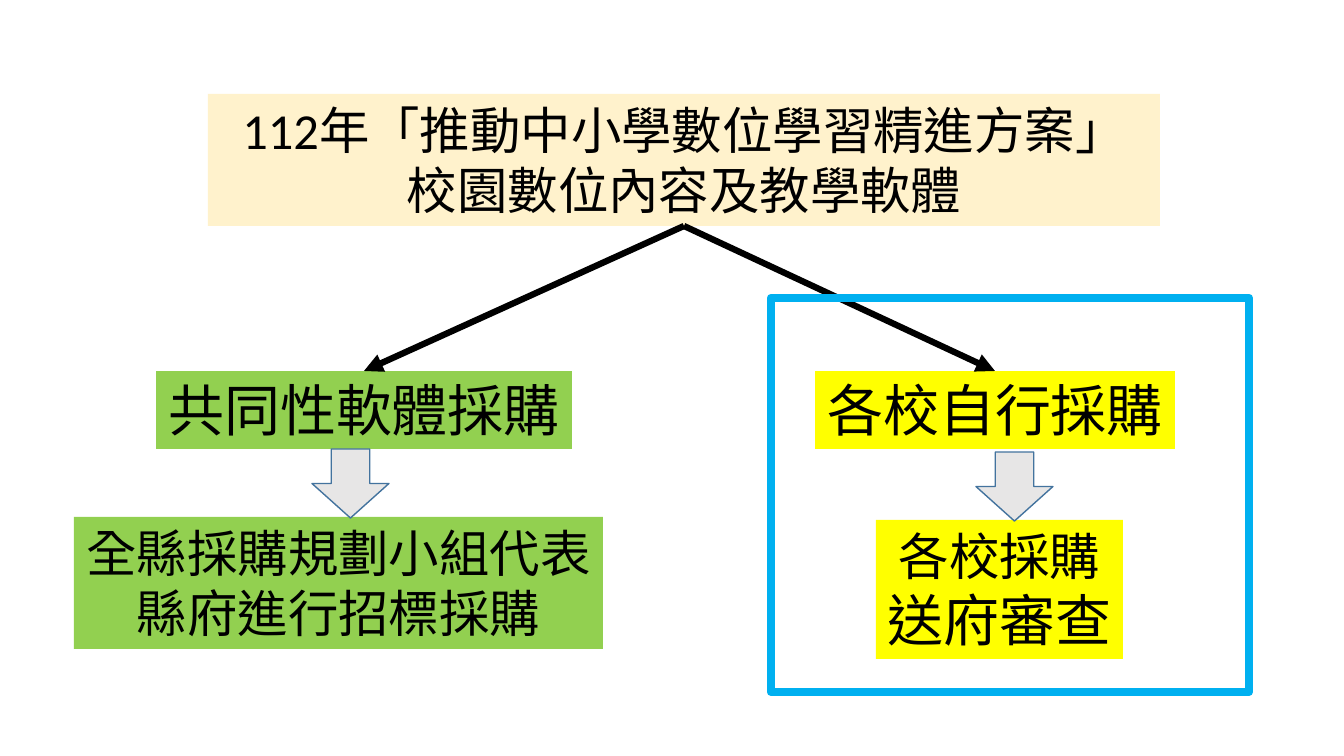
from pptx import Presentation
from pptx.dml.color import RGBColor
from pptx.enum.shapes import MSO_CONNECTOR as CONN, MSO_SHAPE as SHAPE
from pptx.enum.text import MSO_AUTO_SIZE as FIT, PP_ALIGN as ALIGN
from pptx.oxml.ns import qn
from pptx.util import Emu, Pt
from lxml import etree

BLACK = RGBColor(0x00, 0x00, 0x00)
CREAM = RGBColor(0xFF, 0xF2, 0xCC)
GREEN = RGBColor(0x92, 0xD0, 0x50)
YELLOW = RGBColor(0xFF, 0xFF, 0x00)
GRAY = RGBColor(0xE7, 0xE6, 0xE6)
STEEL = RGBColor(0x43, 0x73, 0x9E)
SKY = RGBColor(0x00, 0xB0, 0xF0)

TITLE = [("112年「推動中小學數位學習精進方案」校園數位內容及教學軟體", 36)]
TITLE_BOX = (208, 94, 952, 132)
BRANCHES = [
    {
        "fill": GREEN,
        "head": [("共同性軟體採購", 40)],
        "head_box": (156, 371, 416, 78),
        "arrow": (312, 449),
        "step": [("全縣採購規劃小組代表", 36), ("縣府進行招標採購", 36)],
        "step_box": (74, 517, 529, 132),
    },
    {
        "fill": YELLOW,
        "head": [("各校自行採購", 40)],
        "head_box": (815, 371, 360, 78),
        "arrow": (976, 452),
        "step": [("各校採購", 36), ("送府審查", 40)],
        "step_box": (876, 520, 247, 139),
    },
]
ARROW_SIZE = (77, 69)
FRAME_BOX = (771, 298, 478, 394)
SCALE = 914400 / 100.8


def px(*values):
    return [Emu(round(v * SCALE)) for v in values]


def add_text(slide, lines, *, box, fill, wrap=False, font="Calibri", color=BLACK):
    s = slide.shapes.add_textbox(*px(*box))
    s.fill.solid()
    s.fill.fore_color.rgb = fill
    tf = s.text_frame
    tf.word_wrap = wrap
    tf.auto_size = FIT.SHAPE_TO_FIT_TEXT
    for i, (text, size) in enumerate(lines):
        p = tf.paragraphs[0] if i == 0 else tf.add_paragraph()
        p.alignment = ALIGN.CENTER
        r = p.add_run()
        r.text = text
        r.font.name = font
        r.font.size = Pt(size)
        r.font.color.rgb = color
        r._r.get_or_add_rPr().set("lang", "zh-TW")
    return s


def add_outlined(slide, kind, box, line, width, fill=None):
    s = slide.shapes.add_shape(kind, *px(*box))
    s.shadow.inherit = False
    if fill is None:
        s.fill.background()
    else:
        s.fill.solid()
        s.fill.fore_color.rgb = fill
    s.line.color.rgb = line
    s.line.width = Pt(width)
    return s


def add_link(slide, start, end):
    c = slide.shapes.add_connector(CONN.STRAIGHT, 0, 0, 0, 0)
    c.begin_connect(start, 2)
    c.end_connect(end, 0)
    c.line.color.rgb = BLACK
    c.line.width = Pt(4.5)
    etree.SubElement(c.line._get_or_add_ln(), qn("a:tailEnd"), type="triangle")
    etree.SubElement(c._element.spPr, qn("a:effectLst"))


def main():
    prs = Presentation()
    prs.slide_width, prs.slide_height = px(1344, 756)
    slide = prs.slides.add_slide(prs.slide_layouts[6])

    title = add_text(slide, TITLE, box=TITLE_BOX, fill=CREAM, wrap=True)
    for b in BRANCHES:
        head = add_text(slide, b["head"], box=b["head_box"], fill=b["fill"])
        add_text(slide, b["step"], box=b["step_box"], fill=b["fill"])
        add_outlined(slide, SHAPE.DOWN_ARROW, b["arrow"] + ARROW_SIZE, STEEL, 1, GRAY)
        add_link(slide, title, head)

    frame = add_outlined(slide, SHAPE.RECTANGLE, FRAME_BOX, SKY, 6)
    etree.SubElement(frame.line._get_or_add_ln(), qn("a:round"))
    prs.save("out.pptx")


if __name__ == "__main__":
    main()
